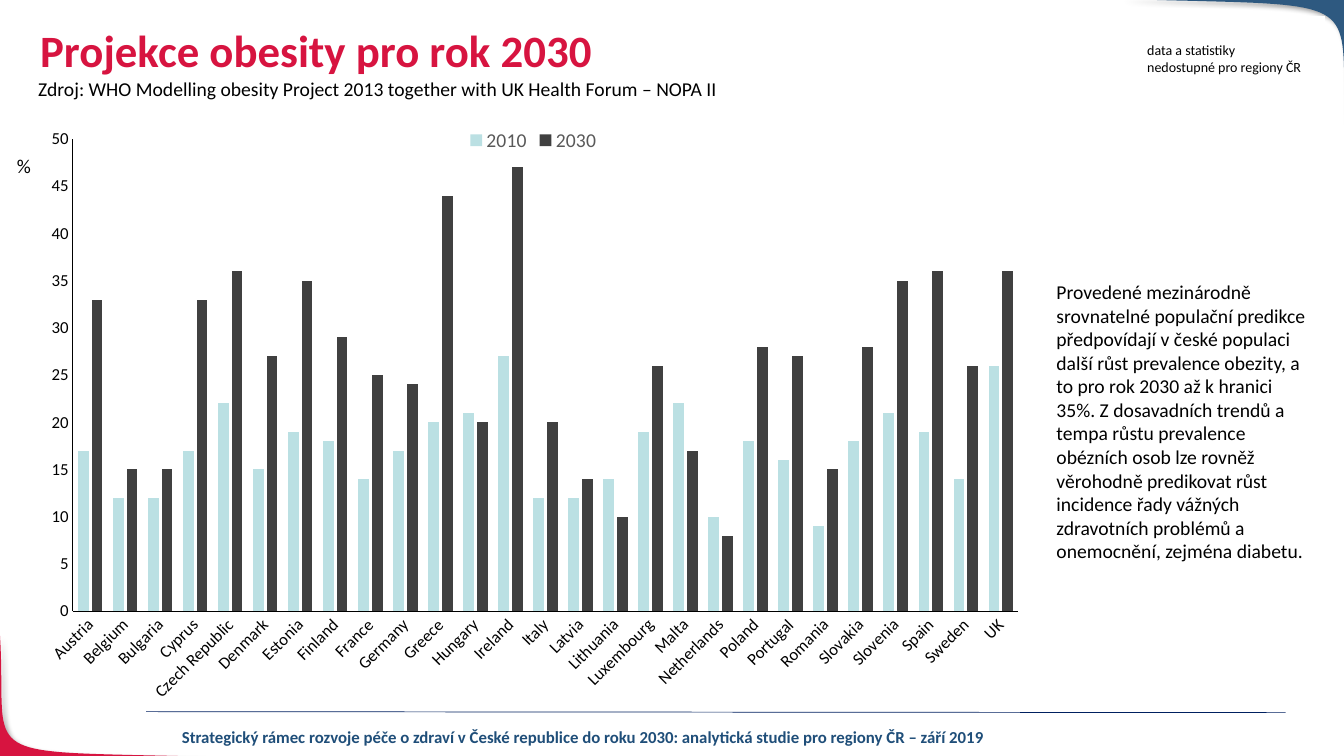
from lxml import etree
from pptx import Presentation
from pptx.chart.data import CategoryChartData
from pptx.dml.color import RGBColor
from pptx.enum.chart import XL_CHART_TYPE, XL_LEGEND_POSITION, XL_TICK_MARK
from pptx.enum.shapes import MSO_CONNECTOR, MSO_SHAPE
from pptx.enum.text import MSO_ANCHOR, PP_ALIGN
from pptx.oxml import parse_xml
from pptx.oxml.ns import nsdecls, qn
from pptx.util import Inches, Pt

RED = RGBColor(0xD7, 0x14, 0x40)
BLUE = RGBColor(0x2E, 0x59, 0x80)
NAVY = RGBColor(0x00, 0x20, 0x60)
FOOTER_BLUE = RGBColor(0x1F, 0x4E, 0x79)
AQUA = RGBColor(0xBB, 0xE0, 0xE3)
CHARCOAL = RGBColor(0x40, 0x40, 0x40)
GREY = RGBColor(0x59, 0x59, 0x59)
BLACK = RGBColor(0x00, 0x00, 0x00)
WHITE = RGBColor(0xFF, 0xFF, 0xFF)

# Country: obesity prevalence in 2010 and projected for 2030
OBESITY = {
    "Austria": (17, 33), "Belgium": (12, 15), "Bulgaria": (12, 15),
    "Cyprus": (17, 33), "Czech Republic": (22, 36), "Denmark": (15, 27),
    "Estonia": (19, 35), "Finland": (18, 29), "France": (14, 25),
    "Germany": (17, 24), "Greece": (20, 44), "Hungary": (21, 20),
    "Ireland": (27, 47), "Italy": (12, 20), "Latvia": (12, 14),
    "Lithuania": (14, 10), "Luxembourg": (19, 26), "Malta": (22, 17),
    "Netherlands": (10, 8), "Poland": (18, 28), "Portugal": (16, 27),
    "Romania": (9, 15), "Slovakia": (18, 28), "Slovenia": (21, 35),
    "Spain": (19, 36), "Sweden": (14, 26), "UK": (26, 36),
}


class SlideBuilder:
    def __init__(self, page, typeface="Calibri"):
        self.page = page
        self.typeface = typeface

    def style(self, font, size, color=BLACK, bold=False):
        values = {"name": self.typeface, "size": Pt(size), "bold": bold}
        for name, value in values.items():
            setattr(font, name, value)
        font.color.rgb = color

    def text(self, area, lines, size, color=BLACK, bold=False,
             align=PP_ALIGN.LEFT, anchor=MSO_ANCHOR.TOP, spacing=1.0):
        box = self.page.shapes.add_textbox(*map(Inches, area))
        frame = box.text_frame
        frame.word_wrap = True
        frame.vertical_anchor = anchor
        for index, line in enumerate(lines):
            para = frame.add_paragraph() if index else frame.paragraphs[0]
            para.alignment = align
            para.line_spacing = spacing
            span = para.add_run()
            span.text = line
            self.style(span.font, size, color, bold)

    def corner(self, start, control1, control2, end, tip, color, steps=40):
        def bezier(t):
            weights = ((1 - t) ** 3, 3 * t * (1 - t) ** 2,
                       3 * t * t * (1 - t), t ** 3)
            points = (start, control1, control2, end)
            return tuple(Inches(sum(w * p[axis] for w, p in zip(weights, points)))
                         for axis in (0, 1))

        outline = self.page.shapes.build_freeform(*map(Inches, start), scale=1.0)
        curve = [bezier(step / steps) for step in range(1, steps + 1)]
        outline.add_line_segments(curve + [tuple(map(Inches, tip))], close=True)
        shape = outline.convert_to_shape()
        shape.fill.solid()
        shape.fill.fore_color.rgb = color
        shape.line.fill.background()
        shape._element.spPr.append(parse_xml(
            f'<a:effectLst {nsdecls("a")}><a:outerShdw blurRad="{Pt(4)}" '
            f'dist="{Pt(3)}" dir="2700000" algn="tl" rotWithShape="0">'
            '<a:srgbClr val="000000"><a:alpha val="40000"/></a:srgbClr>'
            '</a:outerShdw></a:effectLst>'))

    def rule(self, start, end, color, width):
        line = self.page.shapes.add_connector(
            MSO_CONNECTOR.STRAIGHT, *map(Inches, start + end))
        line.line.color.rgb = color
        line.line.width = Pt(width)
        etree.SubElement(line._element.spPr, qn("a:effectLst"))

    def panel(self, area, color):
        shape = self.page.shapes.add_shape(MSO_SHAPE.RECTANGLE, *map(Inches, area))
        shape.shadow.inherit = False
        shape.fill.solid()
        shape.fill.fore_color.rgb = color
        shape.line.fill.background()

    def columns(self, area, table, names, colors):
        data = CategoryChartData()
        data.categories = list(table)
        for name, values in zip(names, zip(*table.values())):
            data.add_series(name, values)
        chart = self.page.shapes.add_chart(
            XL_CHART_TYPE.COLUMN_CLUSTERED, *map(Inches, area), data).chart
        self.style(chart.font, 10)
        chart.has_title = False
        chart.has_legend = True
        chart.legend.position = XL_LEGEND_POSITION.TOP
        chart.legend.include_in_layout = False
        overlay = chart.legend._element.find(qn("c:overlay"))
        overlay.set("val", "1")
        self.style(chart.legend.font, 14, GREY)

        # Bars
        plot = chart.plots[0]
        for name, value in {"gap_width": 100, "overlap": -27,
                            "vary_by_categories": False}.items():
            setattr(plot, name, value)
        for series, color in zip(plot.series, colors):
            series.format.fill.solid()
            series.format.fill.fore_color.rgb = color

        # Axes
        for axis in (chart.category_axis, chart.value_axis):
            axis.has_major_gridlines = False
            axis.major_tick_mark = XL_TICK_MARK.NONE
            axis.minor_tick_mark = XL_TICK_MARK.NONE
            self.style(axis.tick_labels.font, 12)
            axis.format.line.color.rgb = BLACK
            axis.format.line.width = Pt(0.75)
        for name, value in {"minimum_scale": 0, "maximum_scale": 50,
                            "major_unit": 5}.items():
            setattr(chart.value_axis, name, value)
        labels = chart.category_axis._element.find(qn("c:txPr"))
        labels.find(qn("a:bodyPr")).set("rot", "-2700000")

        # Plot area placement as shares of the chart
        plot_area = chart._chartSpace.chart.plotArea
        for old in plot_area.findall(qn("c:layout")):
            plot_area.remove(old)
        layout = etree.Element(qn("c:layout"))
        manual = etree.SubElement(layout, qn("c:manualLayout"))
        for tag, value in {"layoutTarget": "inner", "xMode": "edge",
                           "yMode": "edge", "x": 0.044, "y": 0.037,
                           "w": 0.936, "h": 0.79}.items():
            etree.SubElement(manual, qn(f"c:{tag}")).set("val", str(value))
        plot_area.insert(0, layout)


def main():
    deck = Presentation()
    deck.slide_width, deck.slide_height = Inches(13.33), Inches(7.5)
    builder = SlideBuilder(deck.slides.add_slide(deck.slide_layouts[6]))

    # Corner decorations and footer
    builder.corner((2.13, 7.51), (-0.34, 7.44), (0.08, 7.59), (0, 6.3),
                   (-0.01, 7.51), RED)
    builder.corner((11.11, -0.01), (13.7, 0.07), (13.26, -0.1), (13.35, 1.42),
                   (13.35, -0.01), BLUE)
    builder.rule((1.45, 7.06), (12.75, 7.07), NAVY, 0.5)
    builder.text((1.57, 7.16, 8.43, 0.3), [
        "Strategický rámec rozvoje péče o zdraví v České republice do roku 2030: "
        "analytická studie pro regiony ČR – září 2019"],
        12, FOOTER_BLUE, bold=True, align=PP_ALIGN.CENTER)

    # Chart with its unit
    builder.columns((0.28, 1.16, 10.02, 5.93), OBESITY, ("2010", "2030"),
                    (AQUA, CHARCOAL))
    builder.text((0.07, 1.48, 0.42, 0.34), ["%"], 14)

    # Heading, source and commentary
    builder.text((0.28, 0.71, 12.07, 0.34), [
        "Zdroj: WHO Modelling obesity Project 2013 together with "
        "UK Health Forum – NOPA II"], 14)
    builder.text((10.38, 2.73, 2.74, 3.08), [
        "Provedené mezinárodně srovnatelné populační predikce předpovídají "
        "v české populaci další růst prevalence obezity, a to pro rok 2030 až "
        "k hranici 35%. Z dosavadních trendů a tempa růstu prevalence obézních "
        "osob lze rovněž věrohodně predikovat růst incidence řady vážných "
        "zdravotních problémů a onemocnění, zejména diabetu."], 14)
    builder.text((0.3, 0.18, 11.5, 0.69), ["Projekce obesity pro rok 2030"],
                 32, RED, bold=True, anchor=MSO_ANCHOR.MIDDLE, spacing=0.9)

    # Data availability note
    builder.panel((11, 0.16, 2.14, 0.61), WHITE)
    builder.text((11.28, 0.36, 2.05, 0.44),
                 ["data a statistiky", "nedostupné pro regiony ČR"], 10)

    deck.save("out.pptx")


if __name__ == "__main__":
    main()
